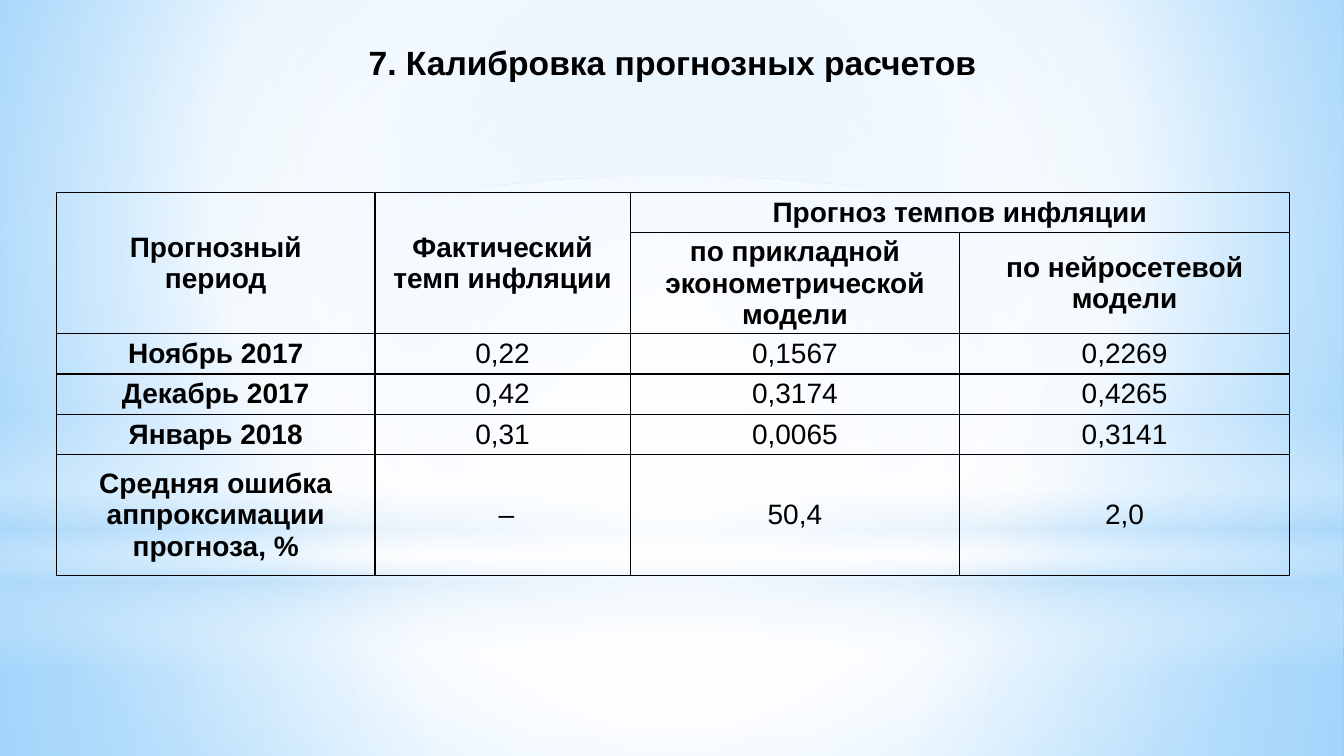
from lxml.etree import SubElement
from pptx import Presentation
from pptx.dml.color import RGBColor
from pptx.enum.shapes import MSO_SHAPE
from pptx.enum.text import MSO_ANCHOR, PP_ALIGN
from pptx.oxml.ns import qn
from pptx.util import Inches, Pt

COLORS = {"ink": "000000", "white": "FFFFFF", "pale": "B4DCFA",
          "sky": "9ED5FF", "blue": "5BB9FF"}
CENTER = (50, 50, 50, 50)


class CalibrationSlide:
    """Hold the style and the current page, and draw each kind of element."""

    font_name = "Arial"

    def __init__(self, deck):
        self.page = deck.slides.add_slide(deck.slide_layouts[6])

    def gradient(self, element, stops, focus=None, angle=90):
        fill = element.xpath(".//a:gradFill")[0]
        for child in list(fill):
            fill.remove(child)
        stop_list = SubElement(fill, qn("a:gsLst"))
        for position, color, opacity in stops:
            stop = SubElement(stop_list, qn("a:gs"), pos=str(position * 1000))
            tint = SubElement(stop, qn("a:srgbClr"), val=COLORS[color])
            if opacity < 100:
                SubElement(tint, qn("a:alpha"), val=str(opacity * 1000))
        if focus:
            circle = SubElement(fill, qn("a:path"), path="circle")
            edges = {side: str(value * 1000) for side, value in zip("ltrb", focus)}
            SubElement(circle, qn("a:fillToRect"), **edges)
        else:
            SubElement(fill, qn("a:lin"), ang=str(angle * 60000), scaled="0")

    def background(self, stops, focus):
        self.page.background.fill.gradient()
        self.gradient(self.page.element, stops, focus)

    def glow(self, kind, top, height, stops, focus=None):
        shape = self.page.shapes.add_shape(
            kind, 0, Inches(top), Inches(13.33), Inches(height))
        shape.shadow.inherit = False
        shape.line.fill.background()
        shape.fill.gradient()
        self.gradient(shape.element, stops, focus)

    def style(self, para, size, bold):
        para.alignment = PP_ALIGN.CENTER
        para.font.name = self.font_name
        para.font.size = Pt(size)
        para.font.bold = bold
        para.font.color.rgb = RGBColor.from_string(COLORS["ink"])

    def title(self, text):
        box = self.page.shapes.add_textbox(
            Inches(0.26), Inches(0.25), Inches(12.82), Inches(0.79))
        frame = box.text_frame
        frame.word_wrap = True
        frame.vertical_anchor = MSO_ANCHOR.MIDDLE
        frame.text = text
        para = frame.paragraphs[0]
        para.line_spacing = 0.9
        self.style(para, 24, True)

    def border(self, cell):
        properties = cell._tc.get_or_add_tcPr()
        for side in ("lnL", "lnR", "lnT", "lnB"):
            line = SubElement(properties, qn(f"a:{side}"), w=str(Pt(1)))
            solid = SubElement(line, qn("a:solidFill"))
            SubElement(solid, qn("a:srgbClr"), val=COLORS["ink"])

    def table(self, rows, widths, heights, merges, header_rows):
        frame = self.page.shapes.add_table(
            len(rows), len(widths), Inches(0.56), Inches(1.91),
            Inches(sum(widths)), Inches(sum(heights)))
        table = frame.table
        table.first_row = table.horz_banding = False
        for column, width in zip(table.columns, widths):
            column.width = Inches(width)
        for row, height in zip(table.rows, heights):
            row.height = Inches(height)
        for row_index, values in enumerate(rows):
            for column_index, text in enumerate(values):
                cell = table.cell(row_index, column_index)
                self.border(cell)
                cell.fill.background()
                cell.vertical_anchor = MSO_ANCHOR.MIDDLE
                cell.margin_left = cell.margin_right = Inches(0.13)
                cell.margin_top = cell.margin_bottom = 0
                cell.text = text
                bold = row_index < header_rows or column_index == 0
                for para in cell.text_frame.paragraphs:
                    self.style(para, 20, bold)
        for first, last in merges:
            table.cell(*first).merge(table.cell(*last))


def main():
    deck = Presentation()
    deck.slide_width, deck.slide_height = Inches(13.33), Inches(7.5)
    slide = CalibrationSlide(deck)
    slide.background([(0, "sky", 100), (60, "white", 100), (100, "blue", 100)],
                     (20, 10, 20, 60))
    slide.glow(MSO_SHAPE.RECTANGLE, 5.58, 1.92,
               [(0, "white", 91), (37, "white", 76), (100, "pale", 79)], CENTER)
    slide.glow(MSO_SHAPE.RECTANGLE, 0, 5.58,
               [(0, "white", 89), (48, "white", 62), (100, "pale", 79)], CENTER)
    slide.glow(MSO_SHAPE.RECTANGLE, 4.12, 2.5,
               [(0, "white", 0), (29, "white", 30), (45, "pale", 40),
                (55, "white", 26), (65, "pale", 60), (100, "white", 0)])
    slide.glow(MSO_SHAPE.OVAL, 1.75, 5.58,
               [(0, "white", 100), (56, "white", 0)], CENTER)
    slide.title("7. Калибровка прогнозных расчетов")
    rows = [
        ("Прогнозный\nпериод", "Фактический темп инфляции",
         "Прогноз темпов инфляции", ""),
        ("", "", "по прикладной эконометрической модели",
         "по нейросетевой модели"),
        ("Ноябрь 2017", "0,22", "0,1567", "0,2269"),
        ("Декабрь 2017", "0,42", "0,3174", "0,4265"),
        ("Январь 2018", "0,31", "0,0065", "0,3141"),
        ("Средняя ошибка аппроксимации прогноза, %", " –", "50,4", "2,0"),
    ]
    slide.table(rows, widths=(3.16, 2.53, 3.27, 3.27),
                heights=(0.4, 0.8, 0.4, 0.4, 0.4, 1.2),
                merges=[((0, 0), (1, 0)), ((0, 1), (1, 1)), ((0, 2), (0, 3))],
                header_rows=2)
    deck.save("out.pptx")


if __name__ == "__main__":
    main()
